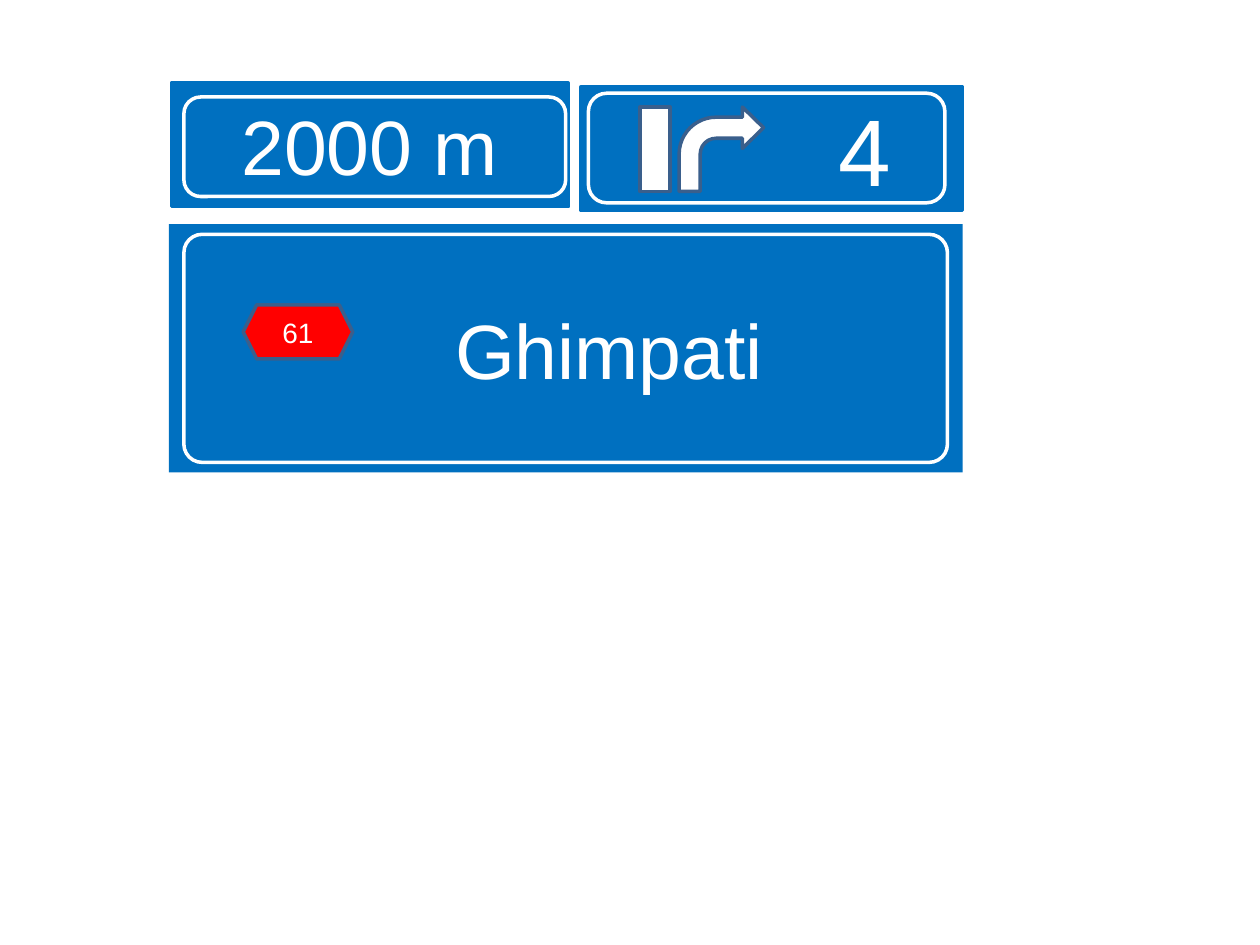
from pptx import Presentation
from pptx.dml.color import RGBColor
from pptx.enum.shapes import MSO_SHAPE as Kind
from pptx.enum.text import MSO_ANCHOR as Anchor, PP_ALIGN as Align
from pptx.util import Inches, Pt

BLUE = RGBColor(0x00, 0x70, 0xC0)
WHITE = RGBColor(0xFF, 0xFF, 0xFF)
RED = RGBColor(0xFF, 0x00, 0x00)
EDGE = RGBColor(0x3A, 0x5F, 0x8C)
WIDE, HIGH = Inches(10), Inches(7.5)

# Boxes are left, top, width, height in percent of the slide.
NEAR = (13.6, 8.8, 31.5, 13.07)
EXIT = (46.1, 9.2, 30.3, 13.07)
TOWN = (13.4, 23.73, 63, 26.27)


def inner(box, left, top, width, height):
    """Return a box whose left and top count from the corner of another."""
    return box[0] + left, box[1] + top, width, height


def draw(slide, kind, box, fill=None, line=None, adj=()):
    left, top, width, height = box
    shape = slide.shapes.add_shape(
        kind, int(WIDE * left / 100), int(HIGH * top / 100),
        int(WIDE * width / 100), int(HIGH * height / 100))
    shape.shadow.inherit = False
    for i, value in enumerate(adj):
        shape.adjustments[i] = value
    if fill is None:
        shape.fill.background()
    else:
        shape.fill.solid()
        shape.fill.fore_color.rgb = fill
    if line is None:
        shape.line.fill.background()
    else:
        shape.line.color.rgb = line
        shape.line.width = Pt(2)
    return shape


def write(shape, text, size, left=1):
    """Centre the text, with a left inset in percent of the slide's width."""
    frame = shape.text_frame
    frame.word_wrap = True
    frame.vertical_anchor = Anchor.MIDDLE
    frame.margin_left = int(WIDE * left / 100)
    para = frame.paragraphs[0]
    para.text = text
    para.alignment = Align.CENTER
    para.font.name = "Arial"
    para.font.size = Pt(size)
    para.font.color.rgb = WHITE


def border(slide, box, round_by=0.167):
    draw(slide, Kind.ROUNDED_RECTANGLE, box, line=WHITE, adj=[round_by])


def plate(slide, box):
    return draw(slide, Kind.ROUNDED_RECTANGLE, box, BLUE, BLUE, [0])


def near_sign(slide, box):
    write(plate(slide, box), "2000 m", 44)
    border(slide, inner(box, 1, 1.47, 30.3, 10.53))


def exit_sign(slide, box):
    write(plate(slide, box), "4", 54, left=15.7)
    draw(slide, Kind.RECTANGLE, inner(box, 4.7, 2.13, 2.4, 8.93), WHITE, EDGE)
    draw(slide, Kind.BENT_ARROW, inner(box, 7.8, 2.13, 6.7, 8.93), WHITE, EDGE,
         [0.25, 0.245, 0.25, 0.438])
    border(slide, inner(box, 0.6, 0.67, 28.3, 11.6))


def town_sign(slide, box):
    write(draw(slide, Kind.RECTANGLE, box, BLUE), "Ghimpati", 44, left=7.9)
    road = draw(slide, Kind.HEXAGON, inner(box, 5.9, 8.53, 8.7, 5.73), RED, EDGE)
    write(road, "61", 16)
    border(slide, inner(box, 1.2, 1.07, 60.6, 24.13), 0.08)


def main():
    deck = Presentation()
    deck.slide_width, deck.slide_height = WIDE, HIGH
    slide = deck.slides.add_slide(deck.slide_layouts[6])
    near_sign(slide, NEAR)
    exit_sign(slide, EXIT)
    town_sign(slide, TOWN)
    deck.save("out.pptx")


if __name__ == "__main__":
    main()
